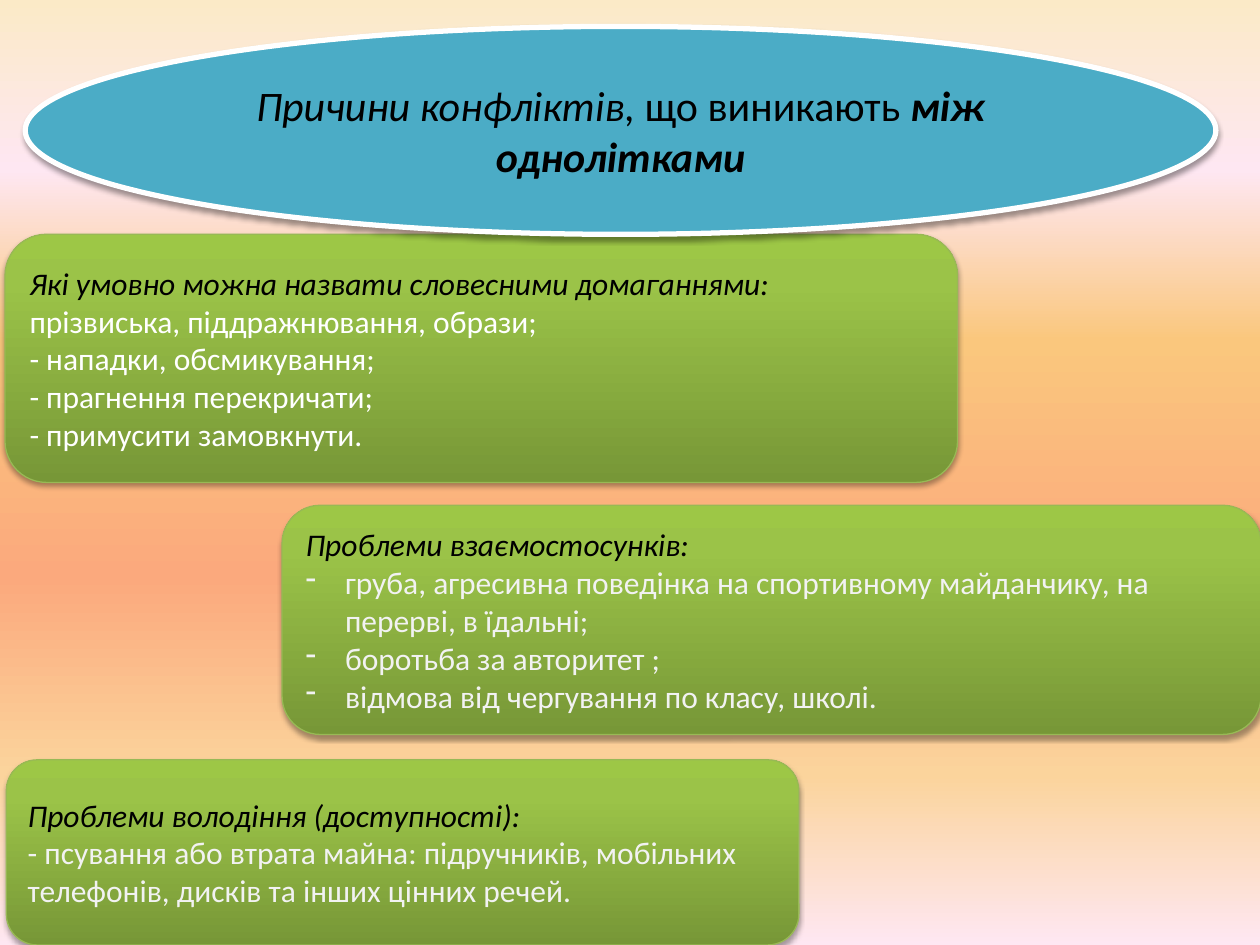
"""Build a slide on the causes of conflict between peers."""
from lxml import etree
from pptx import Presentation
from pptx.dml.color import RGBColor
from pptx.enum.shapes import MSO_SHAPE
from pptx.enum.text import MSO_ANCHOR, PP_ALIGN
from pptx.oxml import parse_xml
from pptx.oxml.ns import qn
from pptx.util import Pt

ROUND, OVAL = MSO_SHAPE.ROUNDED_RECTANGLE, MSO_SHAPE.OVAL
MIDDLE, LEFT, CENTER = MSO_ANCHOR.MIDDLE, PP_ALIGN.LEFT, PP_ALIGN.CENTER
SPACE = "http://schemas.openxmlformats.org/drawingml/2006/main"
HANG = 22.5

SKY = [(0, "FBEAC7"), (18, "FEE7F2"), (36, "FAC77D"),
       (61, "FBA97D"), (82, "FBD49C"), (100, "FEE7F2")]
GREEN = [(0, "779737"), (80, "9BC348"), (100, "9DC746")]
BLACK, WHITE, PALE = "000000", "FFFFFF", "F2F2F2"

CARDS = [
    {"box": (2.9, 133.9, 544.3, 141.8), "color": WHITE, "dash": False,
     "head": "Які умовно можна назвати словесними домаганнями:",
     "items": ["прізвиська, піддражнювання, образи;",
               "- нападки, обсмикування;",
               "- прагнення перекричати;",
               "- примусити замовкнути."]},
    {"box": (161.2, 288.7, 559.4, 131), "color": PALE, "dash": True,
     "head": "Проблеми взаємостосунків:",
     "items": ["груба, агресивна поведінка на спортивному майданчику, "
               "на перерві, в їдальні;",
               "боротьба за авторитет ;",
               "відмова від чергування по класу, школі."]},
    {"box": (3.6, 434.2, 452.9, 105.8), "color": PALE, "dash": False,
     "head": "Проблеми володіння (доступності):",
     "items": ["- псування або втрата майна: підручників, мобільних "
               "телефонів, дисків та інших цінних речей."]},
]
TITLE_BOX = (14.4, 15.1, 680.4, 118.8)
TITLE = [("Причини конфліктів, ", {"italic": True}),
         ("що виникають ", {}),
         ("між однолітками", {"bold": True, "italic": True})]


def rgb(code):
    return RGBColor.from_string(code)


def blend(fill, root, stops, angle):
    fill.gradient()
    fill.gradient_angle = angle
    ramp = next(root.iter(qn("a:gsLst")))
    for old in list(ramp):
        ramp.remove(old)
    for place, code in stops:
        stop = etree.SubElement(ramp, qn("a:gs"), pos=str(place * 1000))
        etree.SubElement(stop, qn("a:srgbClr"), val=code)


def shade(shape, alpha, drop):
    shape.shadow.inherit = False
    old = shape.element.spPr.find(qn("a:effectLst"))
    new = parse_xml(
        f'<a:effectLst xmlns:a="{SPACE}"><a:outerShdw blurRad="{Pt(3.1)}" '
        f'dist="{Pt(drop)}" dir="5400000" rotWithShape="0"><a:srgbClr val="{BLACK}">'
        f'<a:alpha val="{alpha * 1000}"/></a:srgbClr></a:outerShdw></a:effectLst>')
    old.getparent().replace(old, new)


def add_shape(slide, kind, box, edge, width, alpha, drop):
    shape = slide.shapes.add_shape(kind, *map(Pt, box))
    shape.line.color.rgb = rgb(edge)
    shape.line.width = Pt(width)
    shade(shape, alpha, drop)
    shape.text_frame.word_wrap = True
    shape.text_frame.vertical_anchor = MIDDLE
    return shape


def add_run(para, text, size, color, style):
    run = para.add_run()
    run.text = text
    look = {"name": "Calibri", "size": Pt(size), "bold": False, "italic": False}
    for key, value in {**look, **style}.items():
        setattr(run.font, key, value)
    run.font.color.rgb = rgb(color)


def add_dash(para):
    props = para._p.get_or_add_pPr()
    props.set("marL", str(Pt(HANG)))
    props.set("indent", str(-Pt(HANG)))
    etree.SubElement(props, qn("a:buChar"), char="-")


def add_card(slide, card):
    shape = add_shape(slide, ROUND, card["box"], "98B955", 0.75, 35, 1.8)
    blend(shape.fill, shape.element, GREEN, 90)
    frame = shape.text_frame
    head = frame.paragraphs[0]
    head.alignment = LEFT
    add_run(head, card["head"], 18, BLACK, {"italic": True})
    for item in card["items"]:
        para = frame.add_paragraph()
        para.alignment = LEFT
        if card["dash"]:
            add_dash(para)
        add_run(para, item, 18, card["color"], {})


def add_title(slide):
    shape = add_shape(slide, OVAL, TITLE_BOX, WHITE, 3, 38, 1.6)
    shape.fill.solid()
    shape.fill.fore_color.rgb = rgb("4BACC6")
    para = shape.text_frame.paragraphs[0]
    para.alignment = CENTER
    for text, style in TITLE:
        add_run(para, text, 24, BLACK, style)


def main():
    deck = Presentation()
    deck.slide_width, deck.slide_height = Pt(720), Pt(540)
    slide = deck.slides.add_slide(deck.slide_layouts[6])
    blend(slide.background.fill, slide.element, SKY, 270)
    for card in CARDS:
        add_card(slide, card)
    add_title(slide)
    deck.save("out.pptx")


if __name__ == "__main__":
    main()
